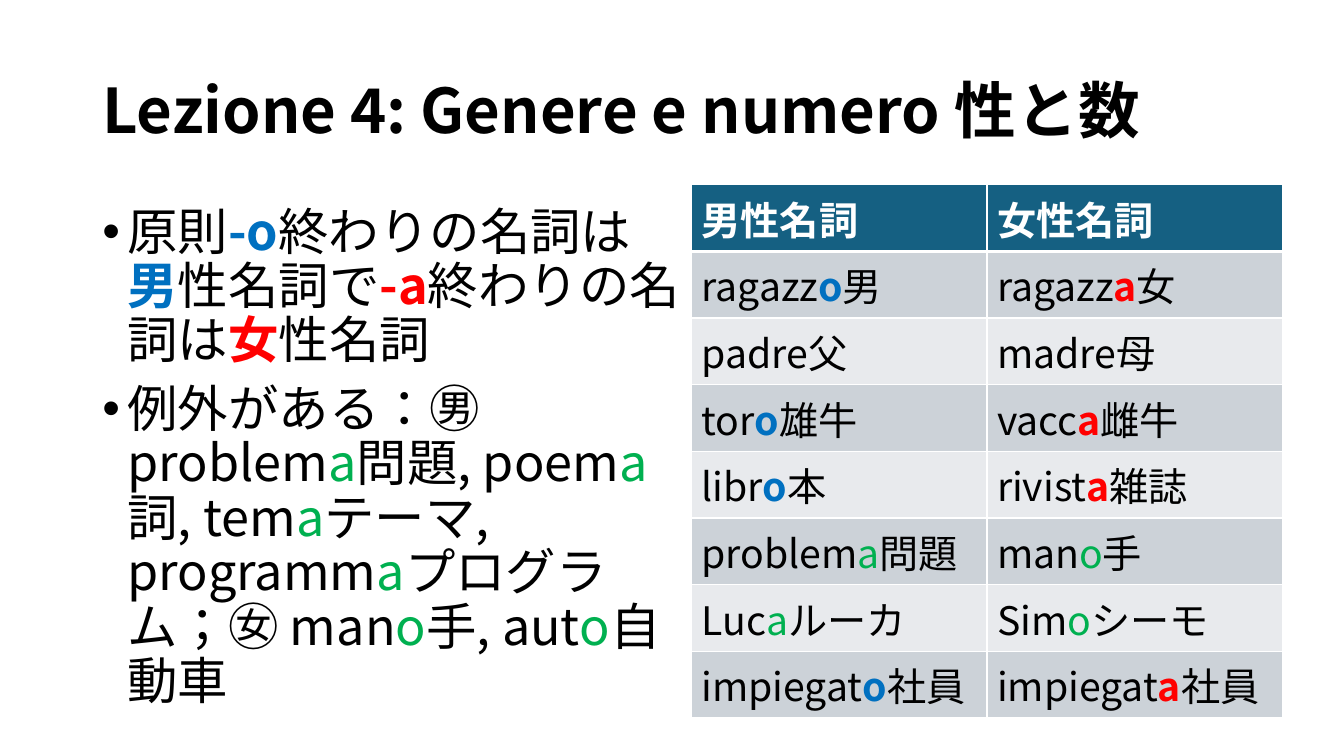
from pptx import Presentation
from pptx.dml.color import RGBColor
from pptx.enum.text import MSO_ANCHOR
from pptx.oxml.ns import qn
from pptx.util import Pt
from lxml.etree import SubElement

COLORS = {
    "black": "000000", "white": "FFFFFF", "blue": "0070C0", "red": "FF0000",
    "green": "00B050", "header": "156082", "dark": "CCD2D8", "light": "E8EAED",
}
FONT = "Noto Sans CJK JP"
RULES = [
    "原則|blue:-o|終わりの名詞は|blue:男|性名詞で|red:-a|終わりの名詞は|red:女|性名詞",
    "例外がある：㊚ problem|green:a|問題, poem|green:a|詞, tem|green:a|テーマ, programm"
    "|green:a|プログラム；㊛ man|green:o|手, aut|green:o|自動車",
]
NOUNS = [
    ("男性名詞", "女性名詞"),
    ("ragazz|blue:o|男", "ragazz|red:a|女"),
    ("padre父", "madre母"),
    ("tor|blue:o|雄牛", "vacc|red:a|雌牛"),
    ("libr|blue:o|本", "rivist|red:a|雑誌"),
    ("problem|green:a|問題", "man|green:o|手"),
    ("Luc|green:a|ルーカ", "Sim|green:o|シーモ"),
    ("impiegat|blue:o|社員", "impiegat|red:a|社員"),
]


def color(name):
    return RGBColor.from_string(COLORS[name])


def write(para, text, size, ink="black", bold=False):
    for index, piece in enumerate(text.split("|")):
        marked = index % 2 == 1
        shade, letters = piece.split(":") if marked else (ink, piece)
        span = para.add_run()
        span.text = letters
        span.font.name = FONT
        span.font.size = Pt(size)
        span.font.bold = bold or (marked and shade != "green")
        span.font.color.rgb = color(shade)
        span.font._element.set("lang", "ja-JP")
        SubElement(span.font._element, qn("a:ea"), typeface=FONT)


class Page:
    """Draws the elements of one slide, with lengths in points."""

    def __init__(self, deck):
        self.slide = deck.slides.add_slide(deck.slide_layouts[6])

    def text(self, paragraphs, left, top, width, height,
             anchor=MSO_ANCHOR.TOP, bullets=False, **style):
        box = self.slide.shapes.add_textbox(Pt(left), Pt(top), Pt(width), Pt(height))
        frame = box.text_frame
        frame.word_wrap = True
        frame.vertical_anchor = anchor
        for index, text in enumerate(paragraphs):
            para = frame.add_paragraph() if index else frame.paragraphs[0]
            para.line_spacing = 0.9
            if bullets:
                self.bullet(para)
            write(para, text, **style)

    def bullet(self, para):
        para.space_before = Pt(10)
        properties = para._p.get_or_add_pPr()
        properties.set("marL", str(Pt(18)))
        properties.set("indent", str(Pt(-18)))
        properties.set("hangingPunct", "0")
        SubElement(properties, qn("a:buFont"), typeface="Arial")
        SubElement(properties, qn("a:buChar"), char="•")

    def borders(self, cell, top, bottom):
        properties = cell._tc.get_or_add_tcPr()
        for side, width in (("L", 1), ("R", 1), ("T", top), ("B", bottom)):
            line = SubElement(properties, qn(f"a:ln{side}"), w=str(Pt(width)))
            fill = SubElement(line, qn("a:solidFill"))
            SubElement(fill, qn("a:srgbClr"), val=COLORS["white"])

    def table(self, rows, left, top, width, height, size):
        table = self.slide.shapes.add_table(
            len(rows), len(rows[0]), Pt(left), Pt(top), Pt(width), Pt(height)).table
        for row, texts in enumerate(rows):
            header = row == 0
            fill = "header" if header else ("light", "dark")[row % 2]
            for column, text in enumerate(texts):
                cell = table.cell(row, column)
                self.borders(cell, top=3 if row == 1 else 1, bottom=3 if header else 1)
                cell.fill.solid()
                cell.fill.fore_color.rgb = color(fill)
                write(cell.text_frame.paragraphs[0], text, size,
                      ink="white" if header else "black", bold=header)


def main():
    deck = Presentation()
    deck.slide_width, deck.slide_height = Pt(960), Pt(540)
    page = Page(deck)
    page.text(["Lezione 4: Genere e numero 性と数"], 66, 28.8, 828, 104.4,
              anchor=MSO_ANCHOR.MIDDLE, size=44, bold=True)
    page.text(RULES, 66, 144, 428, 342.7, bullets=True, size=36)
    page.table(NOUNS, 494, 132, 422, 380.8, size=28)
    deck.save("out.pptx")


if __name__ == "__main__":
    main()
